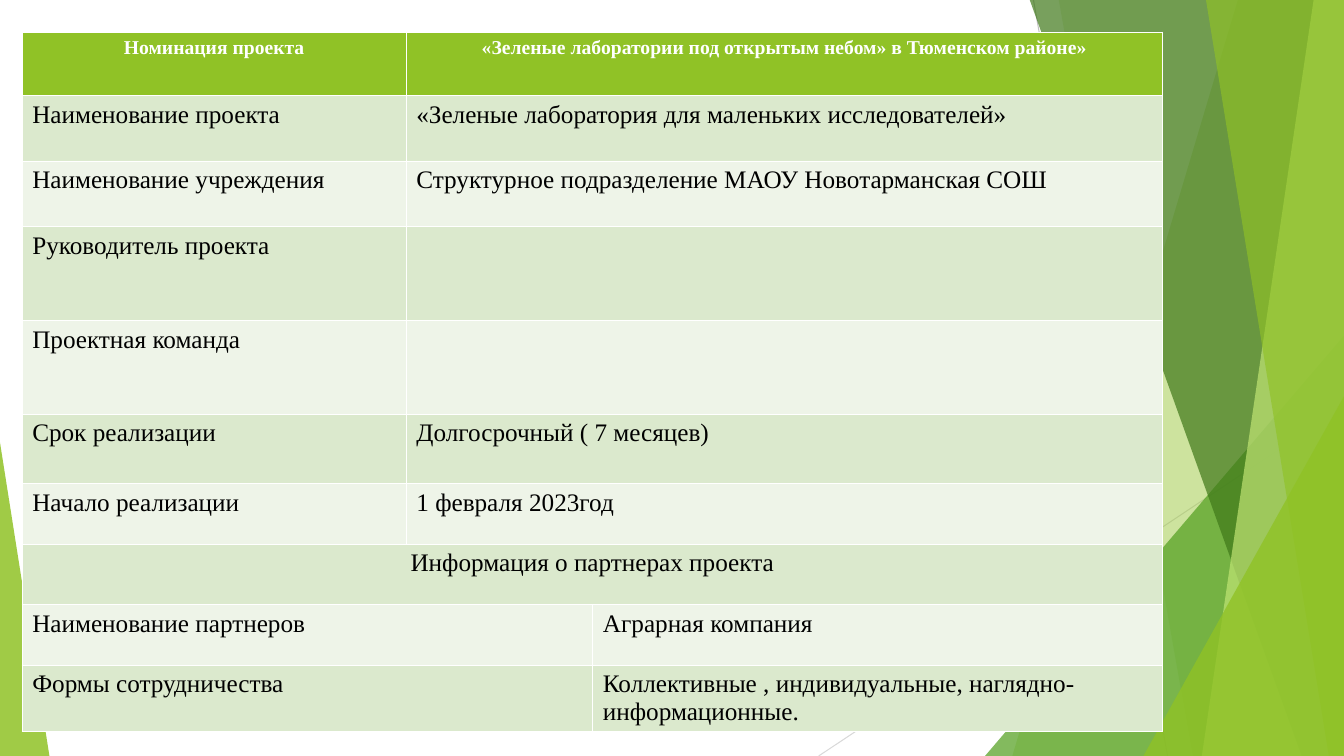
from lxml.etree import SubElement as Sub
from pptx import Presentation
from pptx.dml.color import RGBColor as Rgb
from pptx.enum.shapes import MSO_CONNECTOR as Conn, MSO_SHAPE as Kind
from pptx.enum.text import PP_ALIGN as Align
from pptx.oxml.ns import qn
from pptx.util import Inches, Pt

FACE = "Times New Roman"
theme = {
    "lime": "90C226", "leaf": "54A021", "pine": "3F7819", "pale": "C0E474",
    "bands": ("DBE9CD", "EEF4E8"), "rays": ("BFBFBF", "D9D9D9"),
    "head": {"name": FACE, "size": Pt(14), "bold": True},
    "body": {"name": FACE, "size": Pt(18), "bold": False},
    "light": "FFFFFF", "dark": "000000",
}
WIDE, HIGH = 13.33, 7.5


def paint(shape, tone, alpha):
    shape.shadow.inherit = False
    shape.line.fill.background()
    shape.fill.solid()
    shape.fill.fore_color.rgb = Rgb.from_string(theme[tone])
    clr = shape.fill._xPr.find(".//" + qn("a:srgbClr"))
    Sub(clr, qn("a:alpha"), val=str(alpha * 1000))


def write(cell, text, look, tone, align):
    par = cell.text_frame.paragraphs[0]
    par.alignment = align
    run = par.add_run()
    run.text = text
    for key, val in theme[look].items():
        setattr(run.font, key, val)
    run.font.color.rgb = Rgb.from_string(theme[tone])


deck = Presentation()
deck.slide_width, deck.slide_height = Inches(WIDE), Inches(HIGH)
shapes = deck.slides.add_slide(deck.slide_layouts[6]).shapes

rays = [(10.25, 0, 11.58, HIGH), (WIDE, 4.03, 8.12, HIGH)]
for ends, tone in zip(rays, theme["rays"]):
    ray = shapes.add_connector(Conn.STRAIGHT, *map(Inches, ends))
    ray.line.color.rgb = Rgb.from_string(tone)
    ray.line.width = Pt(0.75)
    Sub(ray._element.spPr, qn("a:effectLst"))

facets = [
    ("panel", (12.28, 10.04), "lime", 30),
    ("panel", (10.5, 11.83), "lime", 20),
    ("wedge", (9.77, 3.33, 3.56, 1), "leaf", 72),
    ("panel", (10.21, 12.91), "pine", 70),
    ("panel", (13.03, 11.92), "pale", 70),
    ("panel", (11.96, 13.18), "lime", 65),
    ("wedge", (11.34, 3.93, 1.99, 1), "lime", 80),
    ("wedge", (0, 4.39, 0.49, 0), "lime", 85),
]
for kind, place, tone, alpha in facets:
    if kind == "panel":
        top, base = place
        pen = shapes.build_freeform(Inches(top), Inches(-0.01))
        edge = [(WIDE, -0.01), (WIDE, HIGH), (base, HIGH)]
        pen.add_line_segments([(Inches(x), Inches(y)) for x, y in edge])
        facet = pen.convert_to_shape()
    else:
        left, top, width, peak = place
        box = map(Inches, (left, top, width, HIGH - top))
        facet = shapes.add_shape(Kind.ISOSCELES_TRIANGLE, *box)
        facet.adjustments[0] = peak
    paint(facet, tone, alpha)

cols = [3.81, 1.85, 5.65]
rows = [
    (0.63, "Номинация проекта",
     "«Зеленые лаборатории под открытым небом» в Тюменском районе»"),
    (0.65, "Наименование проекта",
     "«Зеленые лаборатория для маленьких исследователей»"),
    (0.65, "Наименование учреждения",
     "Структурное подразделение МАОУ Новотарманская СОШ"),
    (0.93, "Руководитель проекта", ""),
    (0.93, "Проектная команда", ""),
    (0.69, "Срок реализации", "Долгосрочный ( 7 месяцев)"),
    (0.6, "Начало реализации", "1 февраля 2023год"),
    (0.6, "Информация о партнерах проекта", None),
    (0.6, "Наименование партнеров", "Аграрная компания"),
    (0.6, "Формы сотрудничества",
     "Коллективные , индивидуальные, наглядно-информационные."),
]
title = 7
size = map(Inches, (0.22, 0.32, sum(cols), sum(row[0] for row in rows)))
grid = shapes.add_table(len(rows), len(cols), *size).table
for col, width in zip(grid.columns, cols):
    col.width = Inches(width)

for i, (high, label, value) in enumerate(rows):
    grid.rows[i].height = Inches(high)
    fill = theme["bands"][(i - 1) % 2] if i else theme["lime"]
    for j in range(len(cols)):
        cell = grid.cell(i, j)
        cell.fill.solid()
        cell.fill.fore_color.rgb = Rgb.from_string(fill)
    first, last = (1, 2) if i < title else (0, 2 if i == title else 1)
    grid.cell(i, first).merge(grid.cell(i, last))
    look, tone = ("body", "dark") if i else ("head", "light")
    align = Align.CENTER if i in (0, title) else Align.LEFT
    write(grid.cell(i, 0), label, look, tone, align)
    if value:
        write(grid.cell(i, 1 if i < title else 2), value, look, tone, align)

deck.save("out.pptx")
